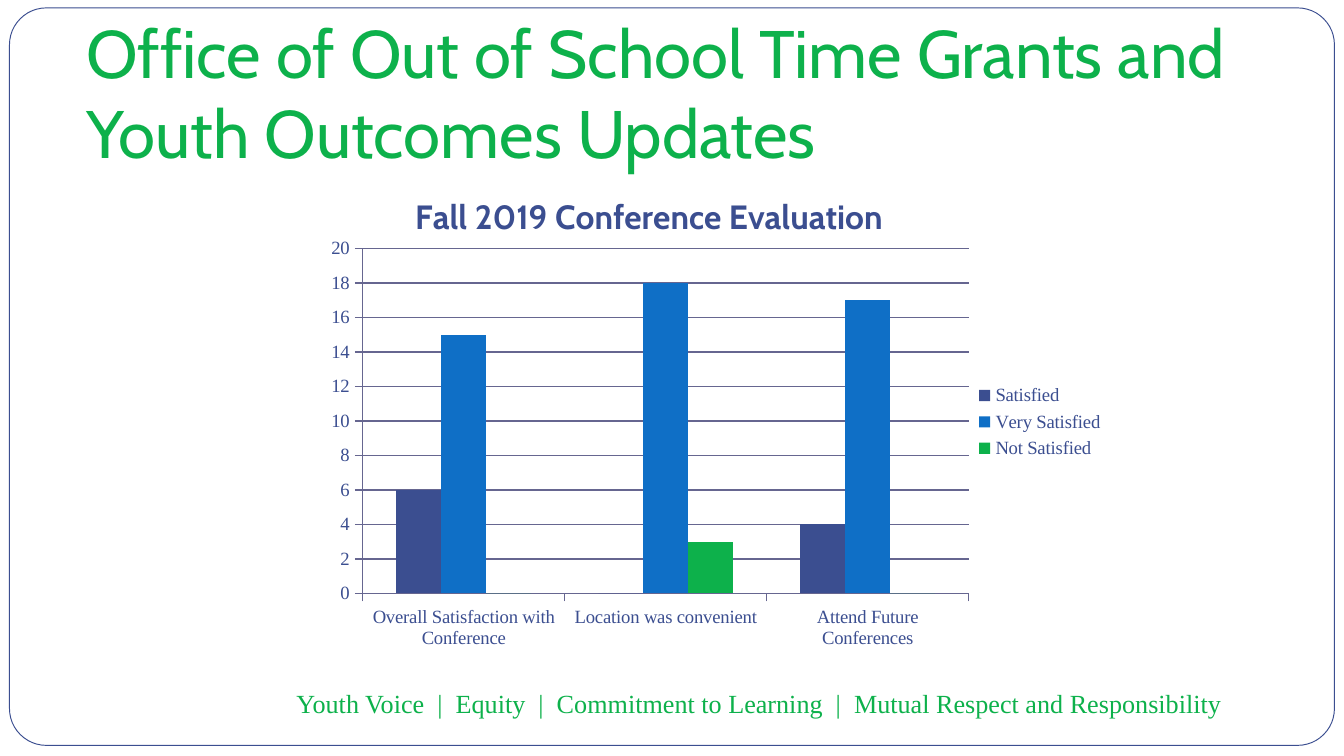
from lxml import etree
from pptx import Presentation
from pptx import util as u
from pptx.chart.data import CategoryChartData
from pptx.dml.color import RGBColor
from pptx.enum import chart as charts, shapes, text
from pptx.oxml.ns import qn

NAVY, BLUE, GREEN, WHITE, GRID = "3B4E90", "0F6FC6", "0DB14B", "FFFFFF", "666690"
SERIF = "Times New Roman"


def color(value):
    return RGBColor.from_string(value)


def set_layout(element, index, **settings):
    for old in element.findall(qn("c:layout")):
        element.remove(old)
    layout = etree.Element(qn("c:layout"))
    manual = etree.SubElement(layout, qn("c:manualLayout"))
    for tag, value in settings.items():
        etree.SubElement(manual, qn(f"c:{tag}")).set("val", str(value))
    element.insert(index, layout)


prs = Presentation()
prs.slide_width, prs.slide_height = u.Cm(25.4), u.Cm(14.29)
slide = prs.slides.add_slide(prs.slide_layouts[6])

frame = slide.shapes.add_shape(
    shapes.MSO_SHAPE.ROUNDED_RECTANGLE, u.Cm(0.18), u.Cm(0.15), u.Cm(25.04), u.Cm(13.94))
frame.adjustments[0] = 0.05
frame.shadow.inherit = False
frame.fill.solid()
frame.fill.fore_color.rgb = color(WHITE)
frame.line.color.rgb = color(NAVY)
frame.line.width = u.Pt(0.5)

captions = [
    ("Office of Out of School Time Grants and Youth Outcomes Updates",
     (1.38, 1.12, 22.96, 2.39), "Cabin", 36, text.MSO_ANCHOR.BOTTOM, 0.25, 0.25),
    ("Youth Voice  |  Equity  |  Commitment to Learning  |  Mutual Respect and Responsibility",
     (5.23, 12.8, 18.95, 0.97), SERIF, 14, text.MSO_ANCHOR.MIDDLE, 0.37, 0.13),
]
for words, place, font_name, size, anchor, left, bottom in captions:
    caption = slide.shapes.add_textbox(*map(u.Cm, place)).text_frame
    caption.word_wrap = True
    caption.vertical_anchor = anchor
    caption.margin_left, caption.margin_bottom = u.Cm(left), u.Cm(bottom)
    line = caption.paragraphs[0]
    line.text = words
    line.font.name, line.font.size = font_name, u.Pt(size)
    line.font.color.rgb = color(GREEN)

ratings = [
    ("Satisfied", (6, 0, 4), NAVY, 1),
    ("Very Satisfied", (15, 18, 17), BLUE, 0),
    ("Not Satisfied", (0, 3, 0), GREEN, 2),
]
answers = CategoryChartData()
answers.categories = [
    "Overall Satisfaction with Conference", "Location was convenient", "Attend Future Conferences"]
for name, counts, _, _ in ratings:
    answers.add_series(name, counts)
evaluation = slide.shapes.add_chart(
    charts.XL_CHART_TYPE.COLUMN_CLUSTERED,
    u.Cm(4.28), u.Cm(3.39), u.Cm(16.84), u.Cm(9.17), answers).chart
evaluation.font.name, evaluation.font.size = SERIF, u.Pt(10)
evaluation.font.color.rgb = color(NAVY)

evaluation.has_title = True
heading = evaluation.chart_title.text_frame.paragraphs[0]
heading.text = "Fall 2019 Conference Evaluation"
heading.font.name, heading.font.size, heading.font.bold = "Cabin", u.Pt(18), True
heading.font.color.rgb = color(NAVY)
set_layout(evaluation.chart_title._element, 1, xMode="edge", yMode="edge", x=0.205, y=0.017)
set_layout(evaluation._chartSpace.chart.plotArea, 0, layoutTarget="inner",
           xMode="edge", yMode="edge", x=0.153, y=0.143, w=0.68, h=0.711)

evaluation.has_legend = True
evaluation.legend.position = charts.XL_LEGEND_POSITION.RIGHT
evaluation.legend.include_in_layout = False

bars = evaluation.plots[0]
bars.gap_width, bars.overlap, bars.vary_by_categories = 150, 0, False
for series, (_, _, fill, order) in zip(list(bars.series), ratings):
    series.format.fill.solid()
    series.format.fill.fore_color.rgb = color(fill)
    series._element.find(qn("c:order")).set("val", str(order))

counts_axis = evaluation.value_axis
counts_axis.minimum_scale, counts_axis.maximum_scale, counts_axis.major_unit = 0, 20, 2
counts_axis.has_major_gridlines = True
for axis in (evaluation.category_axis, counts_axis):
    axis.major_tick_mark = charts.XL_TICK_MARK.OUTSIDE
for part in (evaluation.category_axis, counts_axis, counts_axis.major_gridlines):
    part.format.line.color.rgb = color(GRID)
    part.format.line.width = u.Pt(0.7)

prs.save("out.pptx")
